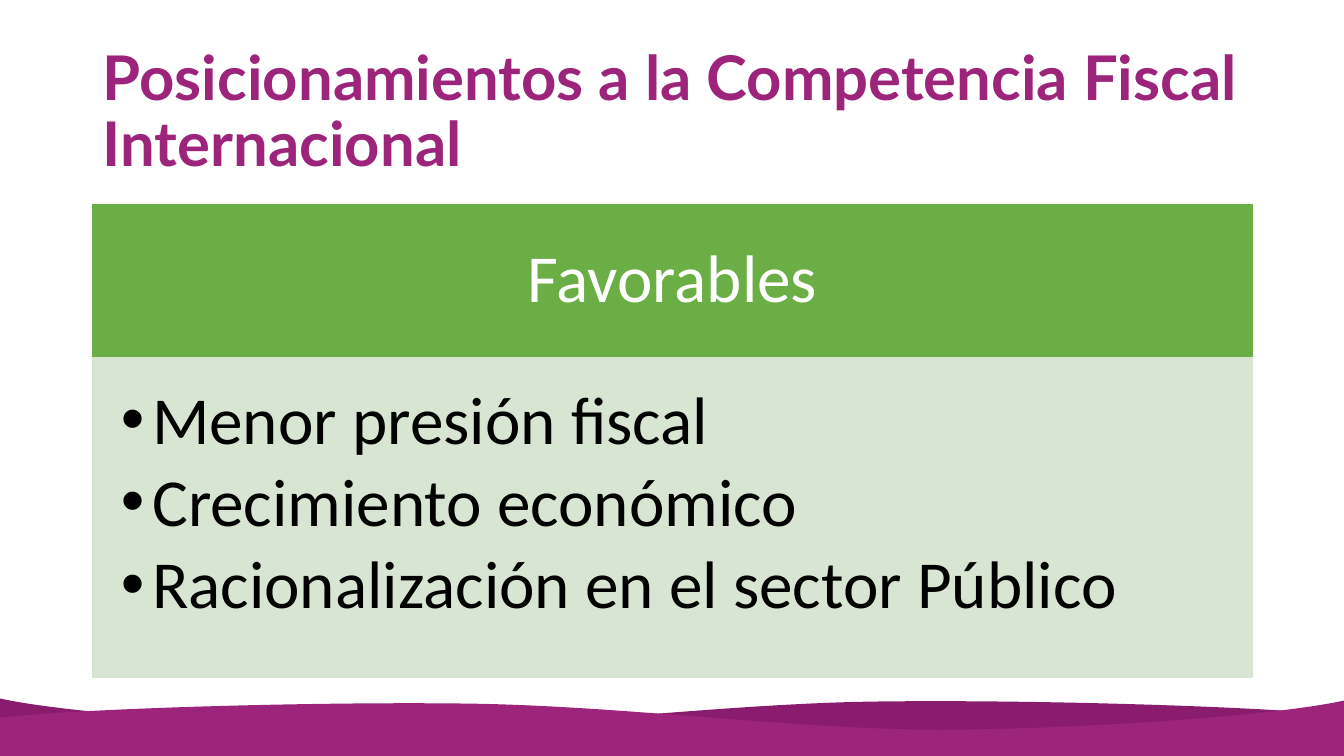
from dataclasses import dataclass

from lxml.etree import SubElement
from pptx import Presentation
from pptx.dml.color import RGBColor
from pptx.enum.shapes import MSO_SHAPE
from pptx.enum.text import MSO_ANCHOR, PP_ALIGN
from pptx.oxml.ns import qn
from pptx.shapes.base import BaseShape
from pptx.slide import Slide
from pptx.text.text import TextFrame
from pptx.util import Inches, Pt

HUES = {
    "plum": "9C247B",
    "dark": "891C6C",
    "green": "6BAE45",
    "pale": "D4E3CF",
    "white": "FFFFFF",
    "black": "000000",
}
WIDE, HIGH = 13.33, 7.5
LEFT, SPAN = 0.92, 11.5
CREST = [
    (13.33, 7.1),
    (12.56, 7.01), (10.26, 6.94), (8.7, 6.96),
    (7.15, 6.98), (5.43, 7.22), (3.98, 7.22),
    (2.53, 7.21), (0.68, 7.08), (0, 6.93),
]


@dataclass
class Wave:
    hue: str
    flip: bool
    drop: float


@dataclass
class Panel:
    lines: list[str]
    top: float
    height: float
    fill: str
    ink: str
    inset: tuple[float, float, float, float]
    alpha: int = 100
    listed: bool = False


WAVES = [Wave("dark", False, 0), Wave("plum", True, 0.02)]
PANELS = [
    Panel(["Favorables"], 2.03, 1.51, "green", "white", (0.37, 0.21, 0.37, 0.21)),
    Panel(
        ["Menor presión fiscal", "Crecimiento económico", "Racionalización en el sector Público"],
        3.55, 3.17, "pale", "black", (0.28, 0.28, 0.37, 0.42), alpha=90, listed=True,
    ),
]


def rgb(hue: str) -> RGBColor:
    return RGBColor.from_string(HUES[hue])


def bend(shape: BaseShape, count: int) -> None:
    lines = list(shape._element.spPr.iter(qn("a:lnTo")))[:count]
    for i in range(0, count, 3):
        cubic = lines[i]
        cubic.tag = qn("a:cubicBezTo")
        for line in lines[i + 1:i + 3]:
            cubic.append(line[0])
            line.getparent().remove(line)


def add_wave(slide: Slide, wave: Wave) -> None:
    dots = [
        (Inches(WIDE - x if wave.flip else x), Inches(min(y + wave.drop, HIGH)))
        for x, y in CREST + [(0, HIGH), (WIDE, HIGH)]
    ]
    form = slide.shapes.build_freeform(*dots[0])
    form.add_line_segments(dots[1:], close=True)
    shape = form.convert_to_shape()
    bend(shape, len(CREST) - 1)
    shape.shadow.inherit = False
    shape.fill.solid()
    shape.fill.fore_color.rgb = rgb(wave.hue)
    shape.line.fill.background()


def set_text(
    frame: TextFrame, lines: list[str], *, font: str, size: float, ink: str,
    bold: bool = False, align: PP_ALIGN = PP_ALIGN.LEFT,
    anchor: MSO_ANCHOR = MSO_ANCHOR.MIDDLE, after: float = 0, bullet: bool = False,
) -> None:
    frame.word_wrap = True
    frame.vertical_anchor = anchor
    for i, line in enumerate(lines):
        para = frame.add_paragraph() if i else frame.paragraphs[0]
        para.alignment = align
        para.line_spacing = 0.9
        para.space_before = Pt(0)
        para.space_after = Pt(after)
        run = para.add_run()
        run.text = line
        run.font.name = font
        run.font.size = Pt(size)
        run.font.bold = bold
        run.font.color.rgb = rgb(ink)
        if bullet:
            props = para._p.get_or_add_pPr()
            props.set("marL", str(Inches(0.31)))
            props.set("indent", str(-Inches(0.31)))
            SubElement(props, qn("a:buFont"), typeface="Arial")
            SubElement(props, qn("a:buChar"), char="•")


def fade(shape: BaseShape, alpha: int) -> None:
    for node in shape._element.spPr.iter(qn("a:srgbClr")):
        SubElement(node, qn("a:alpha"), val=str(alpha * 1000))


def add_panel(slide: Slide, panel: Panel) -> None:
    shape = slide.shapes.add_shape(
        MSO_SHAPE.RECTANGLE, Inches(LEFT), Inches(panel.top), Inches(SPAN), Inches(panel.height)
    )
    shape.shadow.inherit = False
    shape.fill.solid()
    shape.fill.fore_color.rgb = rgb(panel.fill)
    shape.line.color.rgb = rgb(panel.fill)
    shape.line.width = Pt(1)
    if panel.alpha < 100:
        fade(shape, panel.alpha)
    frame = shape.text_frame
    (frame.margin_left, frame.margin_top,
     frame.margin_right, frame.margin_bottom) = map(Inches, panel.inset)
    set_text(
        frame, panel.lines, font="Calibri", size=48, ink=panel.ink, bullet=panel.listed,
        align=PP_ALIGN.LEFT if panel.listed else PP_ALIGN.CENTER,
        anchor=MSO_ANCHOR.TOP if panel.listed else MSO_ANCHOR.MIDDLE,
        after=7 if panel.listed else 0,
    )


def main() -> None:
    deck = Presentation()
    deck.slide_width, deck.slide_height = Inches(WIDE), Inches(HIGH)
    slide = deck.slides.add_slide(deck.slide_layouts[5])
    for wave in WAVES:
        add_wave(slide, wave)
    title = slide.shapes.title
    title.left, title.top = Inches(LEFT), Inches(0.4)
    title.width, title.height = Inches(SPAN), Inches(1.45)
    set_text(
        title.text_frame, ["Posicionamientos a la Competencia Fiscal Internacional"],
        font="Lato", size=44, ink="plum", bold=True,
    )
    for panel in PANELS:
        add_panel(slide, panel)
    deck.save("out.pptx")


if __name__ == "__main__":
    main()
